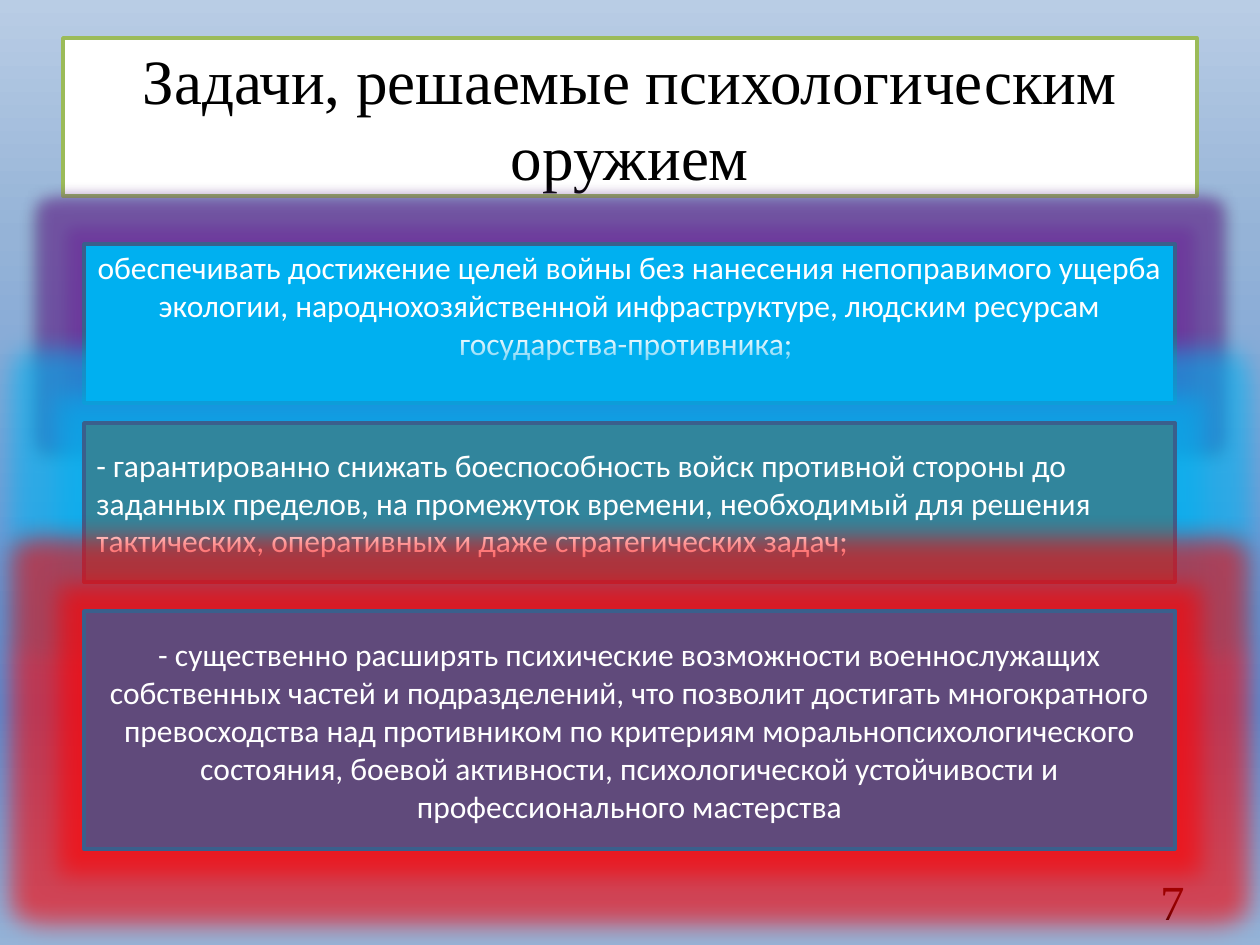
import pptx
import pptx.util
import pptx.dml.color
import pptx.enum.shapes
import pptx.enum.text
import pptx.oxml.ns
import lxml.etree

PX = 914400 / 126
HUE = {
    "white": "FFFFFF", "black": "000000", "green": "9BBB59", "edge": "3A5F8C",
    "blue": "00B0F0", "teal": "31859C", "plum": "604A7B",
    "violet": "7030A0", "red": "FF0000",
    "pale": "B9CDE5", "mist": "95B3D7", "deep": "558ED5",
}
ALIGN = pptx.enum.text.PP_ALIGN
RECT = pptx.enum.shapes.MSO_SHAPE.RECTANGLE
qn = pptx.oxml.ns.qn


def node(root, tag, **attrs):
    return lxml.etree.SubElement(root, qn(tag), {k: str(v) for k, v in attrs.items()})


def write(shape, text, size, font, color, align):
    frame = shape.text_frame
    frame.word_wrap = True
    frame.vertical_anchor = pptx.enum.text.MSO_ANCHOR.MIDDLE
    para = frame.paragraphs[0]
    para.alignment = align
    run = para.add_run()
    run.text = text
    run.font.size = pptx.util.Pt(size)
    run.font.name = font
    run.font.color.rgb = pptx.dml.color.RGBColor.from_string(HUE[color])


deck = pptx.Presentation()
deck.slide_width = round(1260 * PX)
deck.slide_height = round(945 * PX)
slide = deck.slides.add_slide(deck.slide_layouts[6])

back = slide.background.fill
back.gradient()
back.gradient_angle = 270
stops = slide.element.find(".//" + qn("a:gsLst"))
for old in list(stops):
    stops.remove(old)
for pos, color in [(0, "pale"), (25, "mist"), (75, "deep"), (100, "mist")]:
    node(node(stops, "a:gs", pos=pos * 1000), "a:srgbClr", val=HUE[color])

page = slide.shapes.add_textbox(*[round(n * PX) for n in (903, 876, 294, 50)])
write(page, "7", 28, "Times New Roman", "black", ALIGN.RIGHT)

boxes = [
    (63, 38, 1134, 158, "white", "green", None, 0, 36, "Times New Roman", "black", ALIGN.CENTER,
     "Задачи, решаемые психологическим оружием"),
    (84, 244, 1091, 159, "blue", "edge", "violet", 18, 18, "Calibri", "white", ALIGN.CENTER,
     "обеспечивать достижение целей войны без нанесения непоправимого ущерба экологии, "
     "народнохозяйственной инфраструктуре, людским ресурсам государства-противника; "),
    (84, 423, 1091, 159, "teal", "edge", "blue", 28, 18, "Calibri", "white", ALIGN.LEFT,
     "- гарантированно снижать боеспособность войск противной стороны до заданных пределов, "
     "на промежуток времени, необходимый для решения тактических, оперативных и даже "
     "стратегических задач;"),
    (84, 611, 1091, 238, "plum", "edge", "red", 28, 18, "Calibri", "white", ALIGN.CENTER,
     "- существенно расширять психические возможности военнослужащих собственных частей и "
     "подразделений, что позволит достигать многократного превосходства над противником по "
     "критериям моральнопсихологического состояния, боевой активности, психологической "
     "устойчивости и профессионального мастерства"),
]
for x, y, w, h, fill, edge, glow, reach, size, font, ink, align, text in boxes:
    box = slide.shapes.add_shape(RECT, *[round(n * PX) for n in (x, y, w, h)])
    box.shadow.inherit = False
    box.fill.solid()
    box.fill.fore_color.rgb = pptx.dml.color.RGBColor.from_string(HUE[fill])
    box.line.color.rgb = pptx.dml.color.RGBColor.from_string(HUE[edge])
    box.line.width = pptx.util.Pt(2)
    write(box, text, size, font, ink, align)
    effects = box.element.spPr.find(qn("a:effectLst"))
    if glow:
        halo = node(effects, "a:glow", rad=pptx.util.Pt(reach))
        node(node(halo, "a:srgbClr", val=HUE[glow]), "a:alpha", val=60000)
    if fill == "blue":
        box.text_frame.margin_bottom = round(44 * PX)
        shade = node(effects, "a:outerShdw", blurRad=pptx.util.Pt(4), dist=pptx.util.Pt(3),
                     dir=5400000, rotWithShape=0)
        node(node(shade, "a:srgbClr", val=HUE["black"]), "a:alpha", val=40000)

deck.save("out.pptx")
